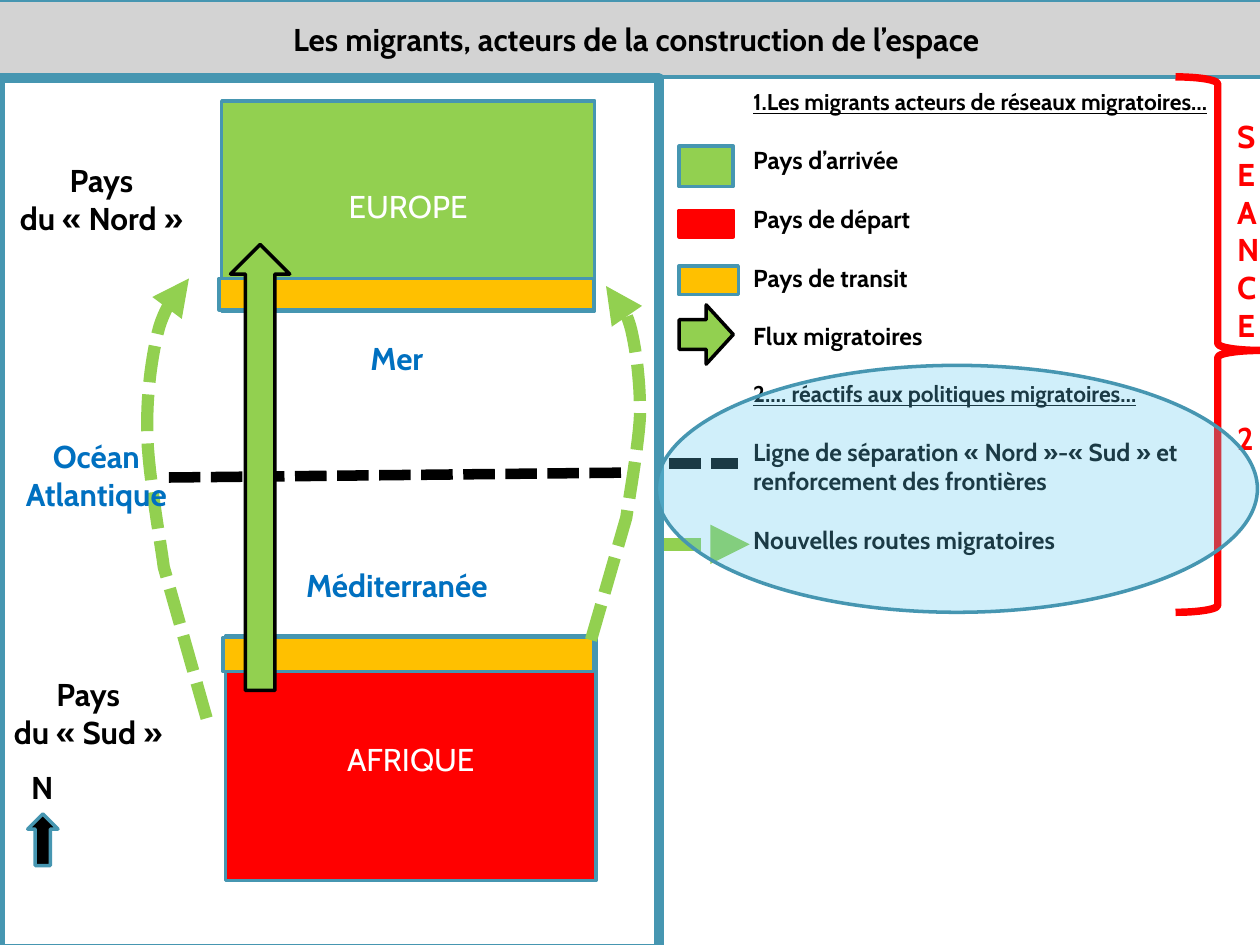
from lxml import etree
from pptx import Presentation
from pptx.dml.color import RGBColor
from pptx.enum.dml import MSO_LINE_DASH_STYLE as Dash
from pptx.enum.shapes import MSO_CONNECTOR, MSO_SHAPE as Preset
from pptx.enum.text import MSO_ANCHOR as Anchor, PP_ALIGN as Align
from pptx.oxml.ns import qn
from pptx.util import Inches, Pt

WIDTH, HEIGHT = 10, 7.5
FONT = "Cabin"
BLACK, WHITE, GREY = "000000", "FFFFFF", "D3D3D3"
GREEN, RED, ORANGE = "92D050", "FF0000", "FFC000"
SEA, EDGE, HALO = "0070C0", "4696B1", "5FCBEF"
LINE_HEIGHT = 1.2  # of the font size

TITLE = "Les migrants, acteurs de la construction de l’espace"

# place, fill, label
ZONES = [
    ((1.76, 0.8, 2.96, 1.67), GREEN, "EUROPE"),
    ((1.79, 5.05, 2.94, 1.94), RED, "AFRIQUE"),
]
TRANSIT_BANDS = [(1.74, 2.21, 2.97, 0.25), (1.77, 5.06, 2.94, 0.27)]

# start, straight end, then Bezier segments of three points
ROUTES = [
    ((1.64, 5.7), (1.3, 4.5), [
        ((1.28, 4.33), (1.18, 3.78), (1.17, 3.47)),
        ((1.16, 3.16), (1.2, 2.86), (1.25, 2.65)),
        ((1.3, 2.44), (1.4, 2.32), (1.5, 2.21))]),
    ((4.69, 5.08), (4.97, 4.11), [
        ((4.99, 3.97), (5.07, 3.53), (5.08, 3.28)),
        ((5.08, 3.03), (5.05, 2.79), (5.01, 2.62)),
        ((4.97, 2.45), (4.89, 2.36), (4.81, 2.27))]),
]

# place, preset, fill, line colour
LEGEND_KEYS = [
    ((5.39, 1.16, 0.43, 0.32), Preset.RECTANGLE, GREEN, EDGE),
    ((5.39, 1.67, 0.43, 0.21), Preset.RECTANGLE, RED, RED),
    ((5.39, 2.11, 0.47, 0.23), Preset.RECTANGLE, ORANGE, EDGE),
    ((5.39, 2.42, 0.43, 0.47), Preset.RIGHT_ARROW, GREEN, BLACK),
]
# text, is a heading
LEGEND = [
    ("1.Les migrants acteurs de réseaux migratoires…", True),
    ("Pays d’arrivée", False),
    ("Pays de départ", False),
    ("Pays de transit", False),
    ("Flux migratoires", False),
    ("2.… réactifs aux politiques migratoires…", True),
    ("Ligne de séparation « Nord »-« Sud » et renforcement des frontières", False),
    ("Nouvelles routes migratoires", False),
]


def rgb(value):
    return RGBColor.from_string(value)


def style_line(line, color, width, dash=None, arrow=False):
    line.color.rgb = rgb(color)
    line.width = Pt(width)
    if dash:
        line.dash_style = dash
    if arrow:
        etree.SubElement(line._get_or_add_ln(), qn("a:tailEnd"), type="triangle")


def write(box, lines, size=18, color=BLACK, bold=True, align=Align.CENTER,
          anchor=Anchor.MIDDLE, wrap=True, gaps=()):
    """Fill a frame; gaps maps a line index to the empty lines above it."""
    frame = box.text_frame
    frame.word_wrap = wrap
    frame.vertical_anchor = anchor
    gaps = dict(gaps)
    for index, text in enumerate(lines):
        para = frame.paragraphs[0] if index == 0 else frame.add_paragraph()
        para.alignment = align
        para.space_before = Pt(gaps.get(index, 0) * size * LINE_HEIGHT)
        span = para.add_run()
        span.text = text
        span.font.name = FONT
        span.font.size = Pt(size)
        span.font.bold = bold
        span.font.color.rgb = rgb(color)
    return frame


def add_shape(page, place, preset=Preset.RECTANGLE, fill=None, line=EDGE, width=2):
    shape = page.shapes.add_shape(preset, *map(Inches, place))
    shape.shadow.inherit = False
    if fill:
        shape.fill.solid()
        shape.fill.fore_color.rgb = rgb(fill)
    else:
        shape.fill.background()
    style_line(shape.line, line, width)
    return shape


def add_text(page, place, lines, **style):
    return write(page.shapes.add_textbox(*map(Inches, place)), lines, **style)


def add_dashes(page, start, end, color, width, arrow=False):
    line = page.shapes.add_connector(
        MSO_CONNECTOR.STRAIGHT, *map(Inches, (*start, *end)))
    style_line(line.line, color, width, Dash.SQUARE_DOT, arrow)
    line.line._get_or_add_ln().find(qn("a:prstDash")).set("val", "sysDash")
    etree.SubElement(line._element.spPr, qn("a:effectLst"))


def bezier(p0, p1, p2, p3, steps=12):
    for step in range(1, steps + 1):
        t = step / steps
        u = 1 - t
        yield tuple(u**3 * a + 3 * u * u * t * b + 3 * u * t * t * c + t**3 * d
                    for a, b, c, d in zip(p0, p1, p2, p3))


def add_route(page, start, bend, curves):
    points = [bend]
    for curve in curves:
        points.extend(bezier(points[-1], *curve))
    builder = page.shapes.build_freeform(*map(Inches, start))
    builder.add_line_segments([tuple(map(Inches, p)) for p in points], close=False)
    route = builder.convert_to_shape()
    route.shadow.inherit = False
    route.fill.background()
    style_line(route.line, GREEN, 7, Dash.SQUARE_DOT, arrow=True)
    route.line._get_or_add_ln().find(qn("a:prstDash")).set("val", "sysDash")


def add_legend(page):
    for place, preset, fill, line in LEGEND_KEYS:
        add_shape(page, place, preset, fill, line)
    add_dashes(page, (5.25, 4.32), (5.95, 4.32), GREEN, 7.5, arrow=True)
    add_dashes(page, (5.31, 3.68), (5.86, 3.68), BLACK, 6)
    frame = add_text(page, (5.88, 0.65, 4.24, 5.25), [text for text, _ in LEGEND],
                     size=14, align=Align.LEFT, anchor=Anchor.TOP,
                     gaps={row: 1 for row in range(1, len(LEGEND))})
    for para, (_, heading) in zip(frame.paragraphs, LEGEND):
        if heading:
            para.runs[0].font.size = Pt(13)
            para.runs[0].font.underline = True


def main():
    deck = Presentation()
    deck.slide_width, deck.slide_height = Inches(WIDTH), Inches(HEIGHT)
    page = deck.slides.add_slide(deck.slide_layouts[6])

    add_shape(page, (-0.02, 0.02, 10.14, 7.5), fill=WHITE)
    for place, fill, label in ZONES:
        write(add_shape(page, place, fill=fill), [label], color=WHITE, bold=False)
    add_dashes(page, (1.34, 3.79), (5.05, 3.75), BLACK, 6)
    add_route(page, *ROUTES[0])
    write(add_shape(page, (-0.02, 0, 10.14, 0.61), fill=GREY), [TITLE])

    add_text(page, (0, 3.27, 1.53, 1), ["Océan Atlantique"], color=SEA)
    add_text(page, (2.06, 3.24, 2.18, 1), ["Mer", "Méditerranée"],
             color=SEA, gaps={1: 5})
    add_legend(page)

    for place in TRANSIT_BANDS:
        add_shape(page, place, fill=ORANGE)
    add_text(page, (0.14, 6.08, 0.39, 0.33), ["N"])
    add_shape(page, (0.22, 6.46, 0.24, 0.41), Preset.UP_ARROW, BLACK)
    add_shape(page, (1.83, 1.94, 0.47, 3.54), Preset.UP_ARROW, GREEN, BLACK)
    add_route(page, *ROUTES[1])

    brace = add_shape(page, (9.33, 0.61, 0.67, 4.25), Preset.RIGHT_BRACE,
                      line=RED, width=4.25)
    brace.adjustments[0], brace.adjustments[1] = 0.083, 0.511
    add_text(page, (9.72, 0.88, 0.37, 2.83), [*"SEANCE2"], color=RED,
             align=Align.LEFT, anchor=Anchor.TOP, wrap=False, gaps={6: 2})

    add_shape(page, (0, 0.62, 5.23, 6.91), width=5.5)
    for place, side in (((0.01, 1.23, 1.59, 0.71), "Nord"),
                        ((-0.02, 5.31, 1.44, 0.71), "Sud")):
        add_text(page, place, ["Pays", f"du « {side} »"],
                 anchor=Anchor.TOP, wrap=False)

    halo = add_shape(page, (5.21, 2.9, 4.77, 1.96), Preset.OVAL, HALO)
    tint = halo._element.spPr.find(qn("a:solidFill"))[0]
    etree.SubElement(tint, qn("a:alpha"), val="29000")

    deck.save("out.pptx")


if __name__ == "__main__":
    main()
